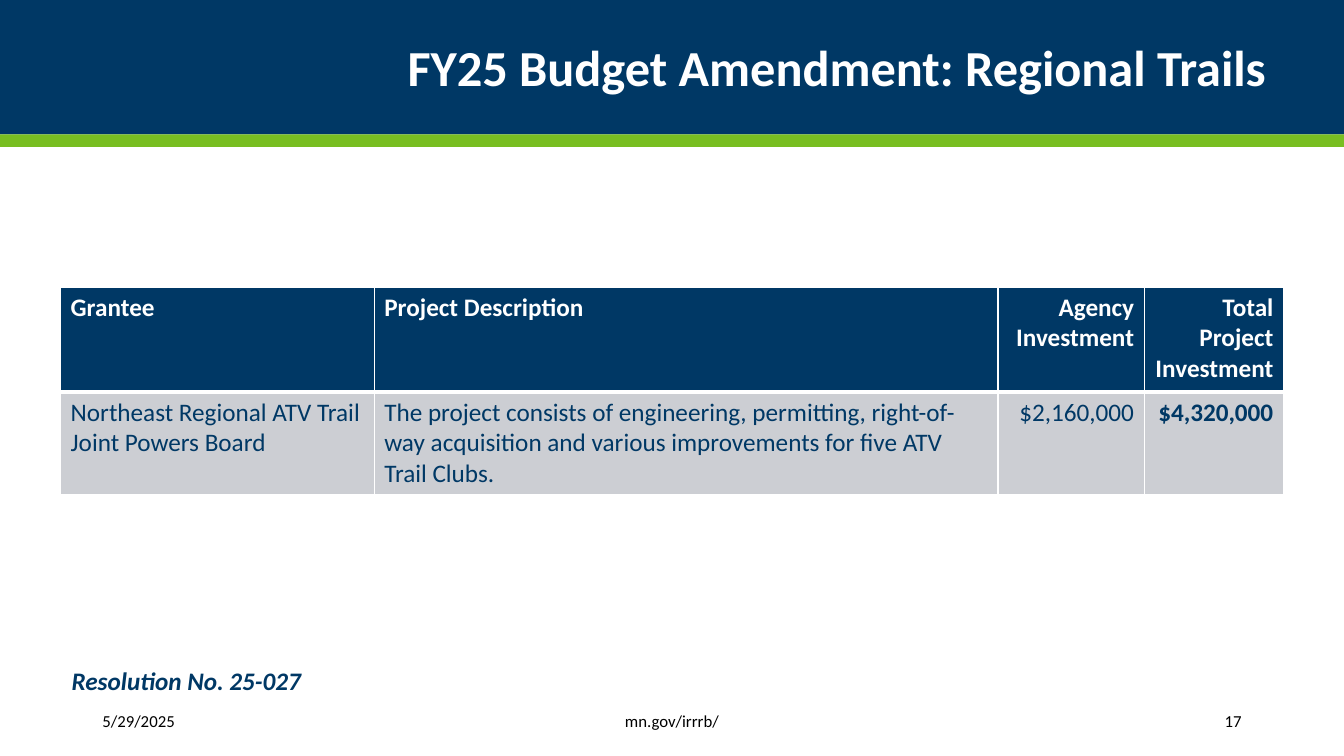
"""Build the budget amendment slide for regional trails."""
import dataclasses

import lxml.etree
import pptx
import pptx.dml.color
import pptx.enum.shapes
import pptx.enum.text
import pptx.oxml.ns
import pptx.util

Pt = pptx.util.Pt
RGB = pptx.dml.color.RGBColor.from_string
ALIGN = pptx.enum.text.PP_ALIGN
MIDDLE = pptx.enum.text.MSO_ANCHOR.MIDDLE


@dataclasses.dataclass(frozen=True)
class Theme:
    font: str = "Calibri"
    navy: str = "003865"
    green: str = "78BE21"
    gray: str = "CCCED3"
    white: str = "FFFFFF"
    black: str = "000000"
    title: int = 36
    body: int = 18
    footer: int = 12


theme = Theme()


def write(frame, text, size, color, align=ALIGN.LEFT, bold=False, italic=False):
    frame.text = text
    frame.word_wrap = True
    para = frame.paragraphs[0]
    para.alignment = align
    font = para.runs[0].font
    font.name, font.size, font.bold, font.italic = theme.font, Pt(size), bold, italic
    font.color.rgb = RGB(color)


def add_border(cell, side, width):
    line = lxml.etree.SubElement(
        cell._tc.get_or_add_tcPr(), pptx.oxml.ns.qn(f"a:ln{side}"), w=str(Pt(width)))
    fill = lxml.etree.SubElement(line, pptx.oxml.ns.qn("a:solidFill"))
    lxml.etree.SubElement(fill, pptx.oxml.ns.qn("a:srgbClr"), val=theme.white)


deck = pptx.Presentation()
deck.slide_width, deck.slide_height = Pt(960), Pt(540)
page = deck.slides.add_slide(deck.slide_layouts[5])

for top, height, color in ((0, 96, theme.navy), (96, 9, theme.green)):
    band = page.shapes.add_shape(
        pptx.enum.shapes.MSO_SHAPE.RECTANGLE, 0, Pt(top), deck.slide_width, Pt(height))
    band.shadow.inherit = False
    band.fill.solid()
    band.fill.fore_color.rgb = RGB(color)
    band.line.fill.background()

title = page.shapes.title
title.left, title.top, title.width, title.height = Pt(84), Pt(14.4), Pt(828), Pt(72)
write(title.text_frame, "FY25 Budget Amendment: Regional Trails",
      theme.title, theme.white, ALIGN.RIGHT, bold=True)
title.text_frame.vertical_anchor = MIDDLE
title.text_frame.paragraphs[0].line_spacing = 0.9
page.shapes.element.append(title.element)

footers = (
    (66, 107, "5/29/2025", ALIGN.LEFT),
    (260, 440, "mn.gov/irrrb/", ALIGN.CENTER),
    (779, 115, "17", ALIGN.RIGHT),
)
for left, width, text, align in footers:
    box = page.shapes.add_textbox(Pt(left), Pt(500.5), Pt(width), Pt(28.8))
    write(box.text_frame, text, theme.footer, theme.black, align)
    box.text_frame.vertical_anchor = MIDDLE

rows = (
    ("Grantee", "Project Description", "Agency Investment", "Total Project Investment"),
    ("Northeast Regional ATV Trail Joint Powers Board",
     "The project consists of engineering, permitting, right-of-way acquisition "
     "and various improvements for five ATV Trail Clubs.",
     "$2,160,000", "$4,320,000"),
)
widths = (224, 445.5, 104.5, 99.5)
heights = (75, 73)
table = page.shapes.add_table(
    len(rows), len(widths), Pt(43.3), Pt(205), Pt(sum(widths)), Pt(sum(heights))).table
for column, width in zip(table.columns, widths):
    column.width = Pt(width)
for row, height in zip(table.rows, heights):
    row.height = Pt(height)

for row_index, texts in enumerate(rows):
    header = row_index == 0
    for column_index, text in enumerate(texts):
        cell = table.cell(row_index, column_index)
        write(cell.text_frame, text, theme.body,
              theme.white if header else theme.navy,
              ALIGN.RIGHT if column_index >= 2 else ALIGN.LEFT,
              bold=header or column_index == 3)
        for side in "LRTB":
            add_border(cell, side, 3 if side == ("B" if header else "T") else 1)
        cell.fill.solid()
        cell.fill.fore_color.rgb = RGB(theme.navy if header else theme.gray)

resolution = page.shapes.add_textbox(Pt(44), Pt(471.6), Pt(538), Pt(29))
write(resolution.text_frame, "Resolution No. 25-027",
      theme.body, theme.navy, bold=True, italic=True)

deck.save("out.pptx")
